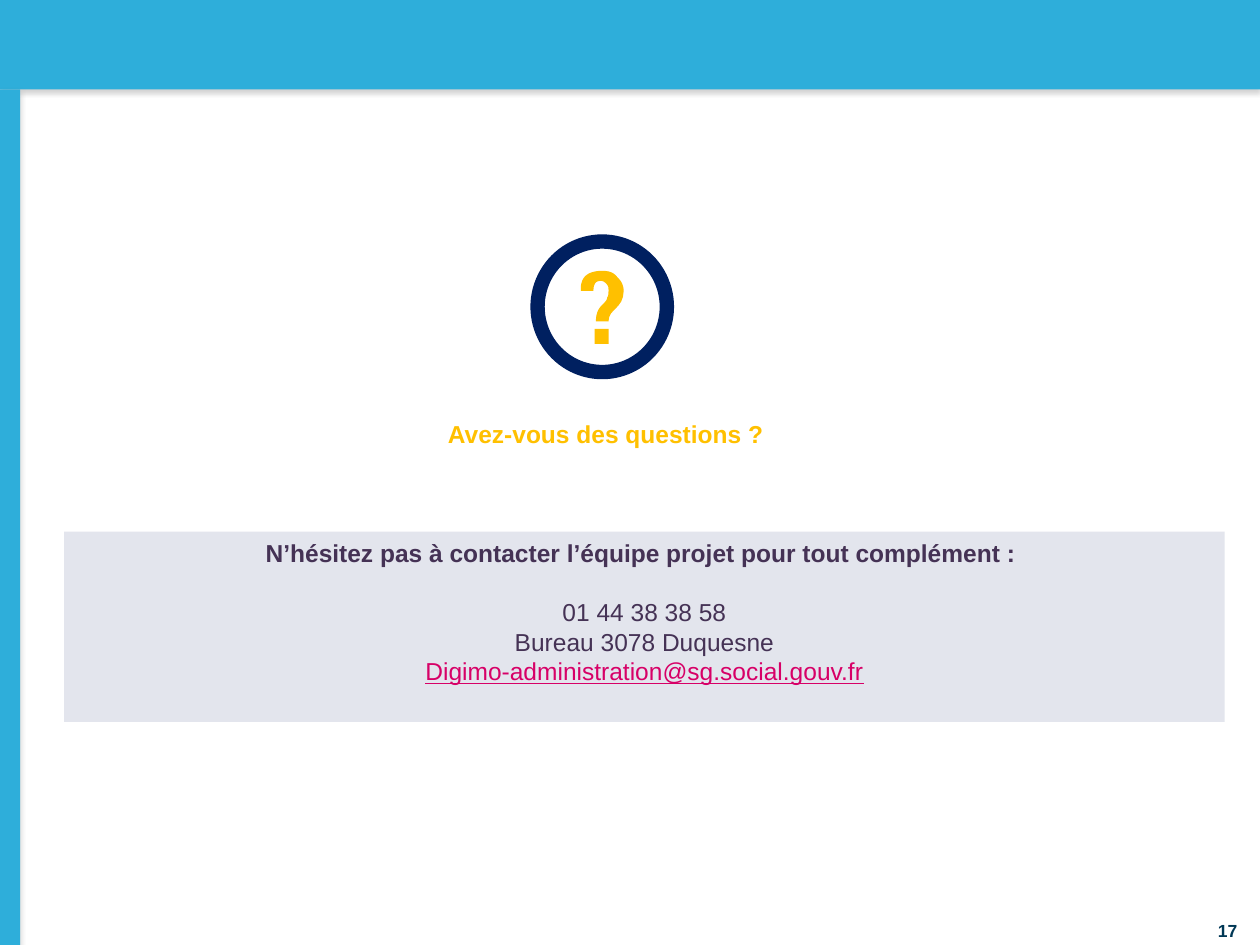
from lxml import etree
from pptx import Presentation
from pptx.dml.color import RGBColor
from pptx.enum.shapes import MSO_SHAPE
from pptx.enum.text import MSO_ANCHOR, PP_ALIGN
from pptx.oxml.ns import qn
from pptx.util import Inches, Pt

RECT, RING = MSO_SHAPE.RECTANGLE, MSO_SHAPE.DONUT
TOP, BOTTOM = MSO_ANCHOR.TOP, MSO_ANCHOR.BOTTOM
CENTER, RIGHT = PP_ALIGN.CENTER, PP_ALIGN.RIGHT

BLUE, NAVY, YELLOW = "2EAEDA", "002060", "FFC000"
PLUM, PINK, PALE, DARK = "453255", "D70067", "E3E5ED", "003855"

BARS = [(0, 0, 10, 0.71), (0, 0.71, 0.16, 6.79)]
CONTACT = [
    ("N’hésitez pas à contacter l’équipe projet pour tout complément : ", PLUM, True, False, 0),
    ("01 44 38 38 58", PLUM, False, False, 17),
    ("Bureau 3078 Duquesne", PLUM, False, False, 0),
    ("Digimo-administration@sg.social.gouv.fr", PINK, False, True, 0),
]
QUESTION = [("Avez-vous des questions ? ", YELLOW, True, False, 0)]
PAGE = [("17", DARK, True, False, 0)]

HOOK_START = (4.73, 2.55)
HOOK = [
    [(4.73, 2.47), (4.76, 2.44), (4.79, 2.41)],
    [(4.8, 2.4), (4.82, 2.38), (4.82, 2.36)],
    [(4.83, 2.35), (4.83, 2.33), (4.83, 2.3)],
    [(4.83, 2.28), (4.83, 2.27), (4.81, 2.25)],
    [(4.8, 2.24), (4.79, 2.23), (4.77, 2.23)],
    [(4.75, 2.23), (4.71, 2.23), (4.71, 2.31)],
    [(4.61, 2.31)],
    [(4.61, 2.29)],
    [(4.61, 2.24), (4.63, 2.2), (4.66, 2.18)],
    [(4.69, 2.16), (4.73, 2.15), (4.78, 2.15)],
    [(4.83, 2.15), (4.87, 2.16), (4.9, 2.2)],
    [(4.93, 2.23), (4.95, 2.26), (4.95, 2.31)],
    [(4.95, 2.45), (4.83, 2.45), (4.83, 2.55)],
]
CURVE_STEPS = 8


def color(value):
    return RGBColor.from_string(value)


def paint(shape, fill):
    shape.shadow.inherit = False
    shape.fill.solid()
    shape.fill.fore_color.rgb = color(fill)
    shape.line.fill.background()
    return shape


def add_block(slide, kind, place, fill):
    return paint(slide.shapes.add_shape(kind, *map(Inches, place)), fill)


def drop_shadow(shape):
    effects = shape._element.spPr.find(qn("a:effectLst"))
    outer = etree.SubElement(effects, qn("a:outerShdw"), blurRad=str(Pt(3.1)),
                             dist=str(Pt(1.8)), dir="5400000", rotWithShape="0")
    tint = etree.SubElement(outer, qn("a:srgbClr"), val="808080")
    etree.SubElement(tint, qn("a:alpha"), val="35000")


def write(frame, lines, size, align, anchor):
    frame.word_wrap = True
    frame.vertical_anchor = anchor
    for index, (text, tint, bold, underline, before) in enumerate(lines):
        paragraph = frame.add_paragraph() if index else frame.paragraphs[0]
        paragraph.alignment = align
        if before:
            paragraph.space_before = Pt(before)
        run = paragraph.add_run()
        run.text = text
        run.font.name = "Arial"
        run.font.size = Pt(size)
        run.font.bold = bold
        run.font.underline = underline
        run.font.color.rgb = color(tint)


def outline(start, segments):
    points = [start]
    for segment in segments:
        if len(segment) == 1:
            points += segment
            continue
        a, (b, c, d) = points[-1], segment
        for step in range(1, CURVE_STEPS + 1):
            t = step / CURVE_STEPS
            u = 1 - t
            points.append(tuple(
                u**3 * a[i] + 3 * u * u * t * b[i] + 3 * u * t * t * c[i] + t**3 * d[i]
                for i in (0, 1)))
    return [(Inches(x), Inches(y)) for x, y in points]


def main():
    deck = Presentation()
    deck.slide_width, deck.slide_height = Inches(10), Inches(7.5)
    slide = deck.slides.add_slide(deck.slide_layouts[6])

    for place in BARS:
        drop_shadow(add_block(slide, RECT, place, BLUE))

    contact = add_block(slide, RECT, (0.51, 4.22, 9.21, 1.51), PALE)
    write(contact.text_frame, CONTACT, 14, CENTER, TOP)

    ring = add_block(slide, RING, (4.21, 1.86, 1.14, 1.15), NAVY)
    ring.adjustments[0] = 0.1
    add_block(slide, RECT, (4.72, 2.61, 0.11, 0.12), YELLOW)
    points = outline(HOOK_START, HOOK)
    builder = slide.shapes.build_freeform(*points[0])
    builder.add_line_segments(points[1:], close=True)
    paint(builder.convert_to_shape(), YELLOW)

    question = slide.shapes.add_textbox(*map(Inches, (3.3, 3.28, 3.07, 0.34)))
    write(question.text_frame, QUESTION, 14, CENTER, TOP)

    page = slide.shapes.add_textbox(*map(Inches, (9.25, 7.19, 0.57, 0.28))).text_frame
    page.margin_left = page.margin_right = page.margin_top = page.margin_bottom = 0
    write(page, PAGE, 10, RIGHT, BOTTOM)

    deck.save("out.pptx")


if __name__ == "__main__":
    main()
